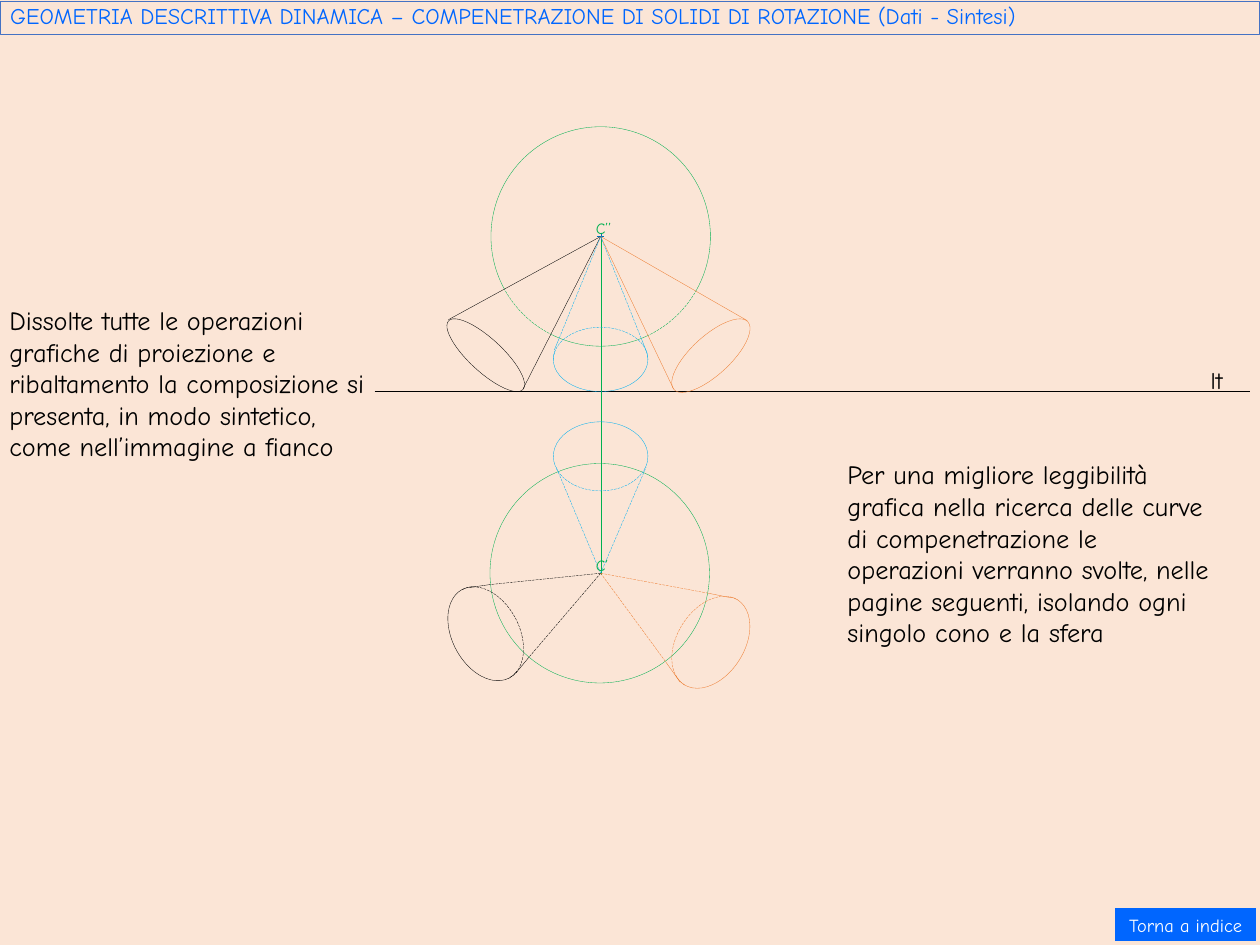
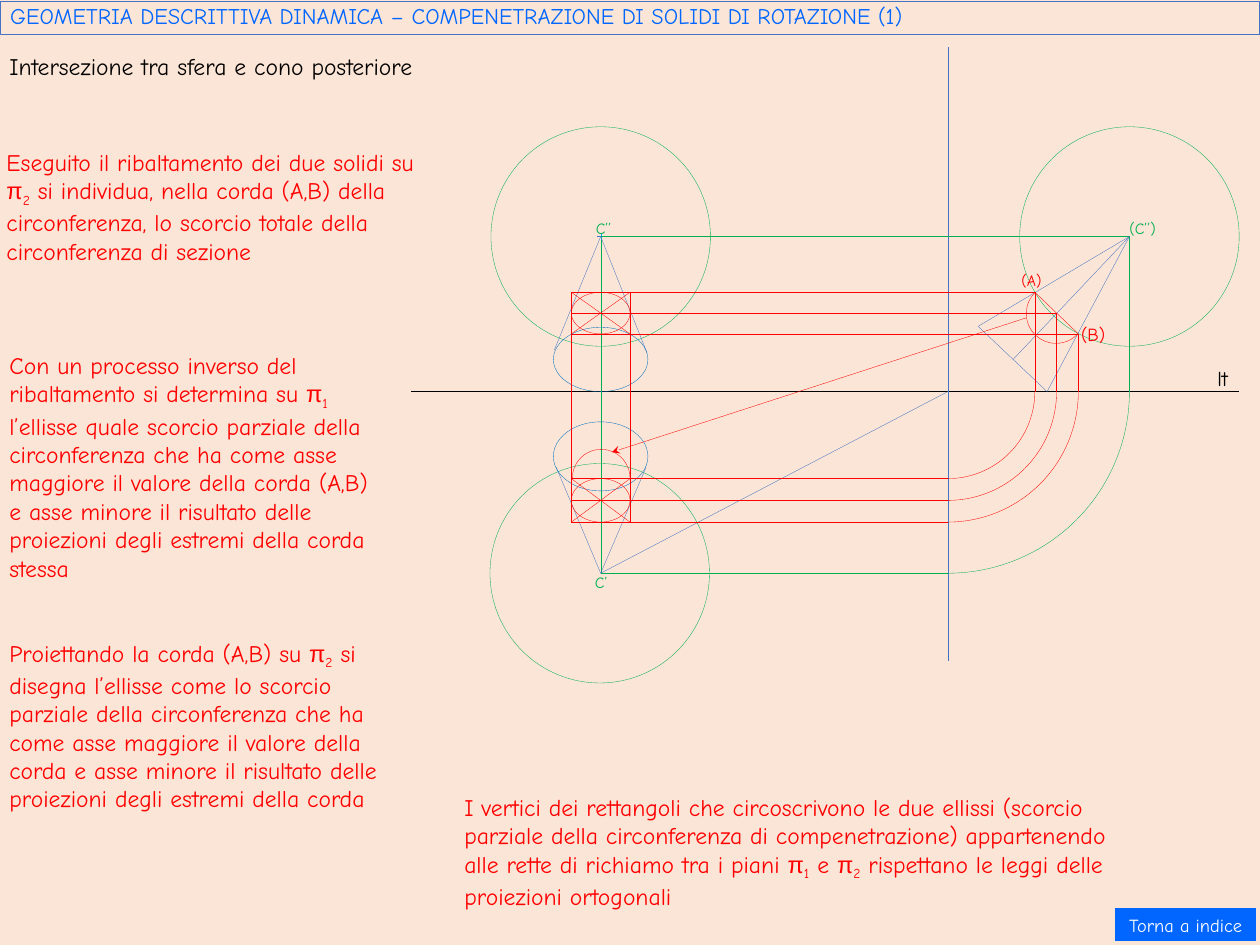
from lxml.etree import SubElement
from pptx import Presentation
from pptx.dml.color import RGBColor
from pptx.enum.dml import MSO_LINE
from pptx.enum.shapes import MSO_CONNECTOR as CONNECTOR, MSO_SHAPE as SHAPE
from pptx.enum.text import MSO_ANCHOR as ANCHOR, MSO_AUTO_SIZE as AUTO_SIZE, PP_ALIGN as ALIGN
from pptx.oxml.ns import qn
from pptx.util import Inches, Pt

COLORS = {
    "background": "FBE5D6",
    "black": "000000",
    "white": "FFFFFF",
    "accent": "0066FF",
    "blue": "4472C4",
    "deep": "0070C0",
    "sky": "00B0F0",
    "green": "00B050",
    "orange": "ED7D31",
    "red": "FF0000",
}
FONT, SYMBOL_FONT = "Comic Neue", "Arial"
TITLE = "GEOMETRIA DESCRITTIVA DINAMICA – COMPENETRAZIONE DI SOLIDI DI ROTAZIONE "
GROUND, FOLD = 4.14, 10.02
FRONT_CENTER, PLAN_CENTER = (6.35, 2.5), (6.35, 6.06)
TURNED_CENTER = (11.94, 2.5)
SPHERE_RADIUS = 1.16
FRONT_BASE, PLAN_BASE = (5.85, 3.46, 1, 0.68), (5.85, 4.46, 1, 0.73)


def rgb(name):
    return RGBColor.from_string(COLORS[name])


def circle_box(center, radius):
    x, y = center
    return x - radius, y - radius, 2 * radius, 2 * radius


def write(shape, text, size=18, color="black", align=ALIGN.LEFT, anchor=ANCHOR.TOP, spacing=1.0):
    frame = shape.text_frame
    frame.word_wrap = True
    frame.vertical_anchor = anchor
    paragraph = frame.paragraphs[0]
    paragraph.alignment = align
    paragraph.line_spacing = spacing

    def add_run(words, font=FONT, baseline=None):
        run = paragraph.add_run()
        run.text = words
        run.font.name = font
        run.font.size = Pt(size)
        run.font.color.rgb = rgb(color)
        if baseline:
            run._r.get_or_add_rPr().set("baseline", baseline)

    opening, *planes = text.split("π")
    add_run(opening)
    for plane in planes:
        add_run("π", font=SYMBOL_FONT)
        add_run(plane[0], baseline="-25000")
        add_run(plane[1:])


class Board:
    """Holds the drawing style and the current slide."""

    def __init__(self, presentation):
        self.presentation = presentation
        self.slide = None

    def open(self, subtitle):
        self.slide = self.presentation.slides.add_slide(self.presentation.slide_layouts[6])
        fill = self.slide.background.fill
        fill.solid()
        fill.fore_color.rgb = rgb("background")
        band = self.shape(SHAPE.RECTANGLE, (0.01, 0.02, 13.31, 0.35), line="blue", width=0.75)
        write(band, TITLE + subtitle, size=17, color="accent", anchor=ANCHOR.MIDDLE, spacing=0.8)
        button = self.shape(SHAPE.ACTION_BUTTON_CUSTOM, (11.79, 9.6, 1.49, 0.35), fill="accent")
        write(button, "Torna a indice", size=14, color="white", align=ALIGN.CENTER, anchor=ANCHOR.MIDDLE)

    def stroke(self, line, color, width=0.25, dashed=False):
        line.color.rgb = rgb(color)
        line.width = Pt(width)
        if dashed:
            line.dash_style = MSO_LINE.LONG_DASH

    def shape(self, kind, box, line=None, fill=None, width=0.25, rotation=0, dashed=False):
        shape = self.slide.shapes.add_shape(kind, *map(Inches, box))
        shape.shadow.inherit = False
        shape.rotation = rotation
        if fill:
            shape.fill.solid()
            shape.fill.fore_color.rgb = rgb(fill)
        else:
            shape.fill.background()
        if line:
            self.stroke(shape.line, line, width, dashed)
        else:
            shape.line.fill.background()
        return shape

    def ellipse(self, box, color, rotation=0):
        self.shape(SHAPE.OVAL, box, line=color, rotation=rotation)

    def arc(self, box, color, start, end, rotation=0, dashed=False):
        arc = self.shape(SHAPE.ARC, box, line=color, rotation=rotation, dashed=dashed)
        arc.adjustments[0] = start * 0.6
        arc.adjustments[1] = end * 0.6

    def line(self, start, end, color, dashed=False, arrow=False):
        connector = self.slide.shapes.add_connector(CONNECTOR.STRAIGHT, *map(Inches, (*start, *end)))
        self.stroke(connector.line, color, dashed=dashed)
        if arrow:
            SubElement(connector.line._get_or_add_ln(), qn("a:tailEnd"), type="stealth")
        SubElement(connector._element.spPr, qn("a:effectLst"))

    def rays(self, origin, ends, color, dashed=False):
        for end in ends:
            self.line(origin, end, color, dashed)

    def text(self, box, text, **style):
        textbox = self.slide.shapes.add_textbox(*map(Inches, box))
        write(textbox, text, **style)
        textbox.text_frame.auto_size = AUTO_SIZE.SHAPE_TO_FIT_TEXT

    def ground_line(self, left, right):
        self.line((left, GROUND), (right, GROUND), "black")

    def center_mark(self, vertical, horizontal):
        x, y = FRONT_CENTER
        self.line((x, y - 0.04), (x, y + 0.04), vertical)
        self.line((x - 0.04, y), (x + 0.04, y), horizontal)

    def fold_back(self, point, left, color):
        x, y = point
        radius = x - FOLD
        self.line((left, y), point, color)
        self.line(point, (x, GROUND), color)
        self.arc(circle_box((FOLD, GROUND), radius), color, 0, 90)
        self.line((left, GROUND + radius), (FOLD, GROUND + radius), color)


def draw_synthesis(board):
    board.open("(Dati - Sintesi)")
    board.ground_line(3.96, 13.21)
    board.line((6.35, 2.46), (6.35, 6.08), "green")
    board.center_mark("deep", "deep")

    board.ellipse(circle_box((6.34, 6.06), SPHERE_RADIUS), "green")
    for start, end, dashed in ((151, 29, False), (29, 64, True), (64, 116, False), (116, 151, True)):
        board.arc(circle_box(FRONT_CENTER, SPHERE_RADIUS), "green", start, end, dashed=dashed)

    board.ellipse((4.96, 3.22, 0.35, 1.07), "black", rotation=312.7)
    board.ellipse((7.31, 3.23, 0.41, 1.06), "orange", rotation=47.4)
    board.rays(FRONT_CENTER, ((4.74, 3.38), (5.53, 4.11)), "black")
    board.rays(FRONT_CENTER, ((7.12, 4.11), (7.9, 3.39)), "orange")
    board.rays(FRONT_CENTER, ((5.91, 3.58), (6.78, 3.58)), "sky", dashed=True)
    board.line((5.91, 3.58), (5.86, 3.7), "sky")
    board.line((6.78, 3.58), (6.84, 3.73), "sky")
    board.arc(FRONT_BASE, "sky", 180, 0, dashed=True)
    board.arc(FRONT_BASE, "sky", 352, 191)

    board.rays(PLAN_CENTER, ((5.88, 4.94), (6.83, 4.94)), "sky", dashed=True)
    board.arc(PLAN_BASE, "sky", 14, 167, dashed=True)
    board.arc(PLAN_BASE, "sky", 167, 14)

    plan_cones = (
        ("black", ((5.18, 6.18), (4.97, 6.21)), ((5.59, 6.95), (5.45, 7.12))),
        ("orange", ((7.48, 6.27), (7.73, 6.32)), ((7.04, 7), (7.19, 7.21))),
    )
    for color, *edges in plan_cones:
        for entry, tangent in edges:
            board.line(PLAN_CENTER, entry, color, dashed=True)
            board.line(entry, tangent, color)
    board.arc((4.78, 6.17, 0.71, 1.06), "black", 78, 283, rotation=332)
    board.arc((4.78, 6.17, 0.71, 1.06), "black", 270, 91, rotation=332, dashed=True)
    board.arc((7.16, 6.26, 0.71, 1.06), "orange", 262, 105, rotation=32.3)
    board.arc((7.16, 6.26, 0.71, 1.06), "orange", 89, 270, rotation=32.3, dashed=True)

    board.text((12.7, 3.82, 0.48, 0.4), "lt")
    board.text((6.2, 2.26, 0.39, 0.24), "C’’", size=12, color="green")
    board.text((6.2, 5.83, 0.39, 0.3), "C’", size=12, color="green")
    board.text(
        (0, 3.17, 4.08, 1.78),
        "Dissolte tutte le operazioni grafiche di proiezione e ribaltamento la composizione si "
        "presenta, in modo sintetico, come nell’immagine a fianco",
        size=20,
    )
    board.text(
        (8.86, 4.8, 4.16, 2.12),
        "Per una migliore leggibilità grafica nella ricerca delle curve di compenetrazione le "
        "operazioni verranno svolte, nelle pagine seguenti, isolando ogni singolo cono e la sfera",
        size=20,
    )


def draw_rear_cone(board):
    board.open("(1)")
    board.ground_line(4.35, 13.1)
    board.line((6.35, 2.46), (6.35, 4.73), "green")
    board.line(PLAN_CENTER, (6.35, 4.49), "green")
    board.center_mark("sky", "blue")
    for center in (FRONT_CENTER, (6.34, 6.06), TURNED_CENTER):
        board.ellipse(circle_box(center, SPHERE_RADIUS), "green")

    board.line((FOLD, 0.5), (FOLD, 6.99), "blue")
    board.line(PLAN_CENTER, (FOLD, GROUND), "blue")
    board.fold_back(TURNED_CENTER, 6.35, "green")

    board.rays(TURNED_CENTER, ((10.71, 3.8), (11.07, GROUND), (10.34, 3.45)), "blue")
    board.line((11.07, GROUND), (10.34, 3.45), "blue")
    board.rays(FRONT_CENTER, ((5.86, 3.7), (6.84, 3.73)), "blue")
    board.rays(PLAN_CENTER, ((5.88, 4.94), (6.83, 4.94)), "blue")
    board.ellipse(FRONT_BASE, "deep")
    board.ellipse(PLAN_BASE, "deep")

    left, right = 6.04, 6.66
    chord_a, chord_middle, chord_b = (10.94, 3.09), (11.17, 3.31), (11.4, 3.53)
    board.line(chord_a, chord_b, "red")
    for point in (chord_a, chord_middle, chord_b):
        board.fold_back(point, left, "red")
    for x in (left, right):
        board.line((x, 3.09), (x, 5.52), "red")
    for top, bottom in ((3.09, 3.53), (5.06, 5.52)):
        board.line((left, top), (right, bottom), "red")
        board.line((left, bottom), (right, top), "red")
        board.ellipse((left, top, right - left, bottom - top), "red")
    board.arc((10.85, 3, 0.63, 0.63), "red", 89, 270, rotation=315)
    board.arc((6.05, 4.75, 0.61, 0.61), "red", 89, 270, rotation=90)
    board.line((10.85, 3.36), (6.47, 4.78), "red", arrow=True)

    board.text((12.77, 3.82, 0.48, 0.37), "lt", size=16)
    labels = (
        ((6.2, 2.26, 0.39, 0.24), "C’’", 12, "green"),
        ((6.19, 6.01, 0.39, 0.3), "C’", 12, "green"),
        ((11.84, 2.26, 0.51, 0.31), "(C’’)", 12, "green"),
        ((10.7, 2.81, 0.47, 0.28), "(A)", 12, "red"),
        ((11.33, 3.37, 0.47, 0.28), "(B)", 14, "red"),
    )
    for box, label, size, color in labels:
        board.text(box, label, size=size, color=color)

    board.text((0, 0.5, 5.74, 0.4), "Intersezione tra sfera e cono posteriore")
    explanations = (
        (
            (-0.03, 1.51, 4.81, 1.31),
            "Eseguito il ribaltamento dei due solidi su π2 si individua, nella corda (A,B) della "
            "circonferenza, lo scorcio totale della circonferenza di sezione",
        ),
        (
            (0, 3.66, 4.14, 2.52),
            "Con un processo inverso del ribaltamento si determina su π1 l’ellisse quale scorcio "
            "parziale della circonferenza che ha come asse maggiore il valore della corda (A,B) "
            "e asse minore il risultato delle proiezioni degli estremi della corda stessa",
        ),
        (
            (0, 6.7, 4.24, 2.22),
            "Proiettando la corda (A,B) su π2 si disegna l’ellisse come lo scorcio parziale della "
            "circonferenza che ha come asse maggiore il valore della corda e asse minore il "
            "risultato delle proiezioni degli estremi della corda",
        ),
        (
            (4.81, 8.33, 7, 1.31),
            "I vertici dei rettangoli che circoscrivono le due ellissi (scorcio parziale della "
            "circonferenza di compenetrazione) appartenendo alle rette di richiamo tra i piani "
            "π1 e π2 rispettano le leggi delle proiezioni ortogonali",
        ),
    )
    for box, explanation in explanations:
        board.text(box, explanation, color="red")


def main():
    presentation = Presentation()
    presentation.slide_width = Inches(13.32)
    presentation.slide_height = Inches(9.99)
    board = Board(presentation)
    draw_synthesis(board)
    draw_rear_cone(board)
    presentation.save("out.pptx")


if __name__ == "__main__":
    main()
